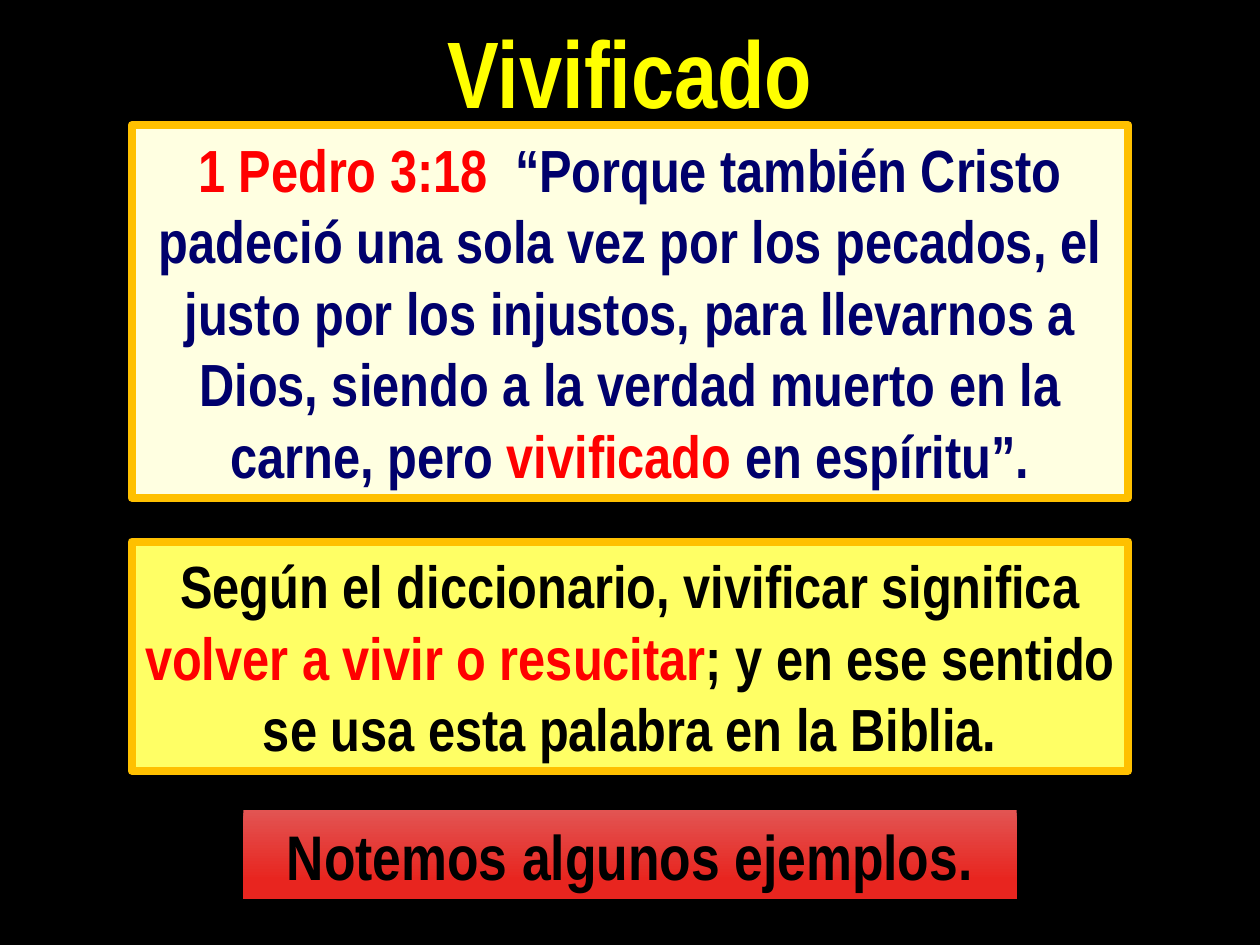
from dataclasses import dataclass

from lxml import etree
from pptx import Presentation
from pptx import util as u
from pptx.dml.color import RGBColor
from pptx.enum import shapes, text
from pptx.oxml import ns

Pt = u.Pt


@dataclass(frozen=True)
class Theme:
    font: str = "Arial Narrow"
    title_size: int = 54
    body_size: int = 34
    closing_size: int = 36
    background: str = "000000"
    title: str = "FFFF00"
    verse: str = "00006C"
    plain: str = "000000"
    accent: str = "FF0000"
    border: str = "FFC000"
    verse_fill: str = "FFFFE1"
    meaning_fill: str = "FFFF65"
    closing_top: str = "E25452"
    closing_bottom: str = "E8251F"


theme = Theme()
rgb = RGBColor.from_string
SLIDE_WIDTH, SLIDE_HEIGHT = 720, 540
PANEL_WIDTH = 569.5


def write_text(shape, pieces, size, wrap=True):
    """Fill the shape with one centred paragraph of (words, colour) pieces."""
    frame = shape.text_frame
    frame.word_wrap = wrap
    frame.auto_size = text.MSO_AUTO_SIZE.SHAPE_TO_FIT_TEXT
    paragraph = frame.paragraphs[0]
    paragraph.alignment = text.PP_ALIGN.CENTER
    for words, color in pieces:
        run = paragraph.add_run()
        run.text = words
        run.font.name = theme.font
        run.font.size = Pt(size)
        run.font.bold = True
        run.font.color.rgb = rgb(color)
        outline = etree.Element(ns.qn("a:ln"), w=str(Pt(0.75)))
        fill = etree.SubElement(outline, ns.qn("a:solidFill"))
        etree.SubElement(fill, ns.qn("a:srgbClr"), val=color)
        run.font._element.insert(0, outline)


def add_panel(slide, top, width, height):
    """Add a horizontally centred rectangle without a shadow."""
    shape = slide.shapes.add_shape(
        shapes.MSO_SHAPE.RECTANGLE,
        Pt((SLIDE_WIDTH - width) / 2), Pt(top), Pt(width), Pt(height))
    shape.shadow.inherit = False
    return shape


presentation = Presentation()
presentation.slide_width = Pt(SLIDE_WIDTH)
presentation.slide_height = Pt(SLIDE_HEIGHT)
slide = presentation.slides.add_slide(presentation.slide_layouts[6])
slide.background.fill.solid()
slide.background.fill.fore_color.rgb = rgb(theme.background)

# Title
title_width = 240.5
title = slide.shapes.add_textbox(
    Pt((SLIDE_WIDTH - title_width) / 2), Pt(4.5), Pt(title_width), Pt(72.5))
write_text(title, [("Vivificado", theme.title)], theme.title_size, wrap=False)

# Bible verse and dictionary meaning
verse = [
    ("1 Pedro 3:18 ", theme.accent),
    (" “Porque también Cristo padeció una sola vez por los pecados, el justo "
     "por los injustos, para llevarnos a Dios, siendo a la verdad muerto en "
     "la carne, pero ", theme.verse),
    ("vivificado ", theme.accent),
    ("en espíritu”.", theme.verse),
]
meaning = [
    ("Según el diccionario, vivificar significa ", theme.plain),
    ("volver a vivir o resucitar", theme.accent),
    ("; y en ese sentido se usa esta palabra en la Biblia.", theme.plain),
]
for top, height, color, pieces in [
    (71.5, 213, theme.verse_fill, verse),
    (309.5, 131, theme.meaning_fill, meaning),
]:
    panel = add_panel(slide, top, PANEL_WIDTH, height)
    panel.fill.solid()
    panel.fill.fore_color.rgb = rgb(color)
    panel.line.color.rgb = rgb(theme.border)
    panel.line.width = Pt(4.5)
    write_text(panel, pieces, theme.body_size)

# Closing banner
banner = add_panel(slide, 463, 442, 51)
banner.line.fill.background()
banner.fill.gradient()
banner.fill.gradient_angle = 270
for stop, position, color in zip(
        banner.fill.gradient_stops, (0, 0.78),
        (theme.closing_top, theme.closing_bottom)):
    stop.position = position
    stop.color.rgb = rgb(color)
write_text(banner, [("Notemos algunos ejemplos.", theme.plain)], theme.closing_size)

presentation.save("out.pptx")
